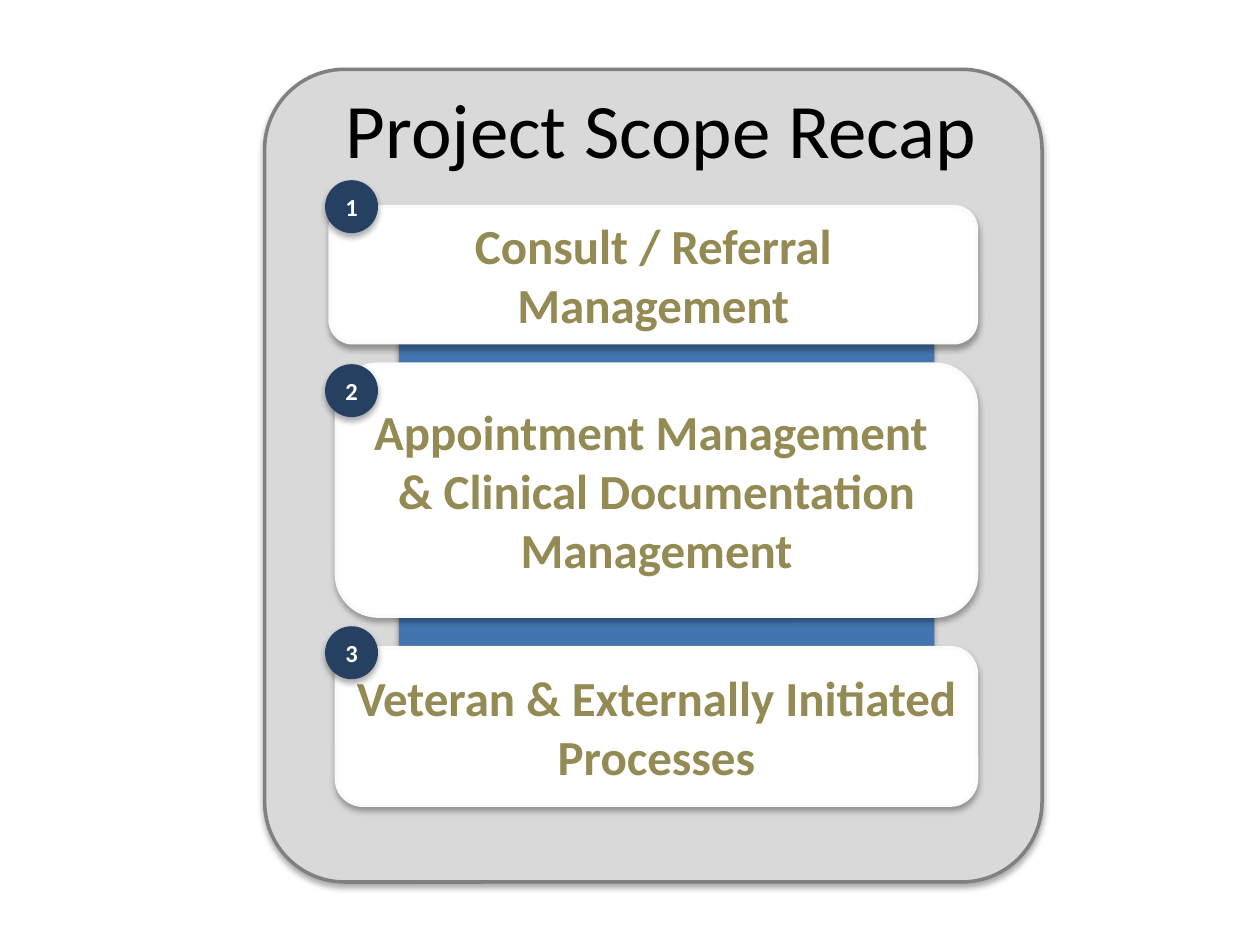
from lxml import etree
from pptx import Presentation
from pptx.dml.color import RGBColor
from pptx.enum.shapes import MSO_SHAPE as Shape
from pptx.enum.text import MSO_ANCHOR as Anchor, PP_ALIGN as Align
from pptx.oxml.ns import qn
from pptx.util import Inches, Pt

TITLE = "Project Scope Recap"
PANEL = (1.96, 0.69, 6.45, 6.17)
BAND = (3.27, 1.99, 4.04, 4.25)
CARDS = [
    (["Consult / Referral Management"], (2.62, 1.64, 5.13, 1.08), 1.43),
    (["Appointment Management ", "& Clinical Documentation Management"],
     (2.67, 2.89, 5.08, 2), 2.89),
    (["Veteran & Externally Initiated Processes"], (2.67, 5.14, 5.08, 1.25), 4.97),
]
BADGE_LEFT, BADGE_SIZE = 2.58, 0.42


def color(value):
    return RGBColor.from_string(value)


def add_shadow(shape):
    shape.shadow.inherit = False
    effects = shape._element.spPr.find(qn("a:effectLst"))
    shadow = etree.SubElement(effects, qn("a:outerShdw"), blurRad=str(Pt(3.5)),
                              dist=str(Pt(2.2)), dir="5400000", rotWithShape="0")
    black = etree.SubElement(shadow, qn("a:srgbClr"), val="000000")
    etree.SubElement(black, qn("a:alpha"), val="32000")


def add_block(slide, kind, box, fill, line=None, rotation=0):
    shape = slide.shapes.add_shape(kind, *map(Inches, box))
    shape.rotation = rotation
    shape.fill.solid()
    shape.fill.fore_color.rgb = color(fill)
    if line:
        shape.line.color.rgb = color(line)
        shape.line.width = Pt(2)
    else:
        shape.line.fill.background()
    add_shadow(shape)
    return shape


def write(shape, lines, size, text_color, bold=False, margin=0.1):
    frame = shape.text_frame
    frame.word_wrap = True
    frame.vertical_anchor = Anchor.MIDDLE
    frame.margin_left = frame.margin_right = Inches(margin)
    paragraph = frame.paragraphs[0]
    paragraph.alignment = Align.CENTER
    for index, text in enumerate(lines):
        if index:
            paragraph.add_line_break()
        run = paragraph.add_run()
        run.text = text
        run.font.name = "Calibri"
        run.font.size = Pt(size)
        run.font.bold = bold
        run.font.color.rgb = color(text_color)


def main():
    presentation = Presentation()
    presentation.slide_width = Inches(10)
    presentation.slide_height = Inches(7.5)
    slide = presentation.slides.add_slide(presentation.slide_layouts[6])

    panel = add_block(slide, Shape.ROUNDED_RECTANGLE, PANEL, "D9D9D9", "808080", 90)
    panel.adjustments[0] = 0.103
    add_block(slide, Shape.ROUNDED_RECTANGLE, BAND, "4274AF", rotation=90)

    for number, (lines, box, badge_top) in enumerate(CARDS, 1):
        card = add_block(slide, Shape.ROUNDED_RECTANGLE, box, "FFFFFF", "FCFBF9")
        write(card, lines, 28, "948A54", bold=True, margin=0.08)
        badge_box = (BADGE_LEFT, badge_top, BADGE_SIZE, BADGE_SIZE)
        badge = add_block(slide, Shape.FLOWCHART_CONNECTOR, badge_box, "254061")
        write(badge, [str(number)], 14, "FFFFFF", bold=True)

    title = slide.shapes.add_textbox(*map(Inches, (0.75, 0.39, 9, 1.25)))
    write(title, [TITLE], 44, "000000")
    presentation.save("out.pptx")


if __name__ == "__main__":
    main()
